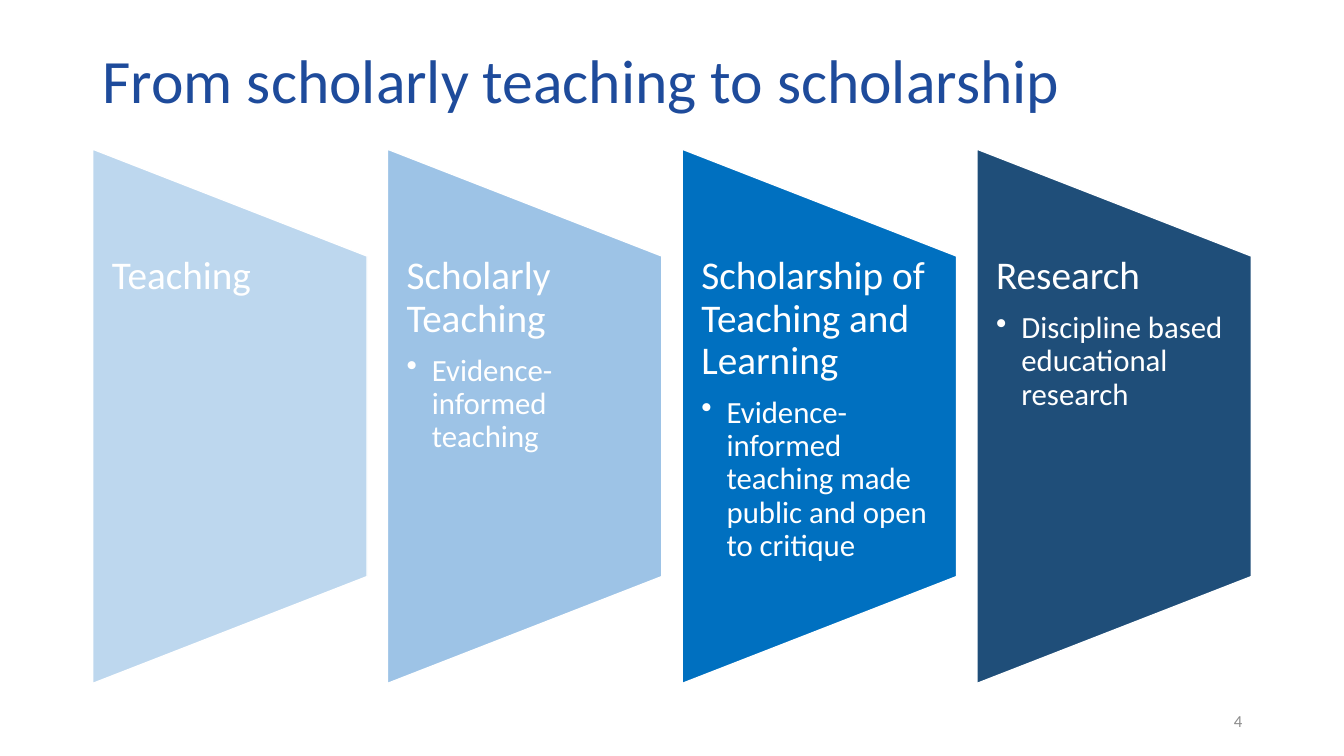
import pptx
import pptx.util
import pptx.dml.color
import pptx.enum.shapes
import pptx.enum.text
import pptx.oxml.ns
from lxml import etree

Inches, Pt = pptx.util.Inches, pptx.util.Pt
RGBColor = pptx.dml.color.RGBColor
ALIGN = pptx.enum.text.PP_ALIGN
ANCHOR = pptx.enum.text.MSO_ANCHOR

WHITE = RGBColor(0xFF, 0xFF, 0xFF)
NAVY = RGBColor(0x1E, 0x4B, 0x9B)
GREY = RGBColor(0x8C, 0x8C, 0x8C)
PALE = RGBColor(0xBD, 0xD7, 0xEE)
LIGHT = RGBColor(0x9D, 0xC3, 0xE6)
BLUE = RGBColor(0x00, 0x70, 0xC0)
DARK = RGBColor(0x1F, 0x4E, 0x79)

TITLE = "From scholarly teaching to scholarship"
NUMBER = "4"
STAGES = [
    ("Teaching", None, PALE),
    ("Scholarly Teaching", "Evidence-informed teaching", LIGHT),
    ("Scholarship of Teaching and Learning",
     "Evidence-informed teaching made public and open to critique", BLUE),
    ("Research", "Discipline based educational research", DARK),
]

LEFT, SPAN = 0.92, 11.49
WIDE, TALL, MID = 2.72, 5.3, 4.13
TEXT_H = 3.18
STEP = (SPAN - WIDE) / (len(STAGES) - 1)


def add_box(slide, x, y, w, h, anchor=ANCHOR.TOP, pads=(0.1, 0.05, 0.1, 0.05)):
    """Add a wrapping text box; pads are left, top, right, bottom."""
    box = slide.shapes.add_textbox(Inches(x), Inches(y), Inches(w), Inches(h))
    frame = box.text_frame
    frame.word_wrap = True
    frame.vertical_anchor = anchor
    (frame.margin_left, frame.margin_top,
     frame.margin_right, frame.margin_bottom) = map(Inches, pads)
    return frame


def write(para, text, size, color, align=ALIGN.LEFT, line=1.0, after=0,
          bullet=False):
    if bullet:
        props = para._p.get_or_add_pPr()
        props.set("marL", str(Inches(0.25)))
        props.set("indent", str(-Inches(0.25)))
        mark = etree.SubElement(props, pptx.oxml.ns.qn("a:buChar"))
        mark.set("char", "•")
    para.alignment = align
    para.line_spacing = line
    para.space_after = Pt(after)
    run = para.add_run()
    run.text = text
    run.font.name = "Calibri"
    run.font.size = Pt(size)
    run.font.color.rgb = color


def add_panel(slide, x, fill):
    """Add a trapezoid turned so that its long side faces left."""
    panel = slide.shapes.add_shape(
        pptx.enum.shapes.MSO_SHAPE.FLOWCHART_MANUAL_OPERATION,
        Inches(x + (WIDE - TALL) / 2), Inches(MID - WIDE / 2),
        Inches(TALL), Inches(WIDE))
    panel.rotation = 270
    panel.shadow.inherit = False
    panel.fill.solid()
    panel.fill.fore_color.rgb = fill
    panel.line.color.rgb = WHITE
    panel.line.width = Pt(1)


def main():
    deck = pptx.Presentation()
    deck.slide_width, deck.slide_height = Inches(13.33), Inches(7.5)
    slide = deck.slides.add_slide(deck.slide_layouts[6])

    title = add_box(slide, LEFT, 0.4, 11.5, 0.85, ANCHOR.MIDDLE)
    write(title.paragraphs[0], TITLE, 44, NAVY, line=0.9)

    for i, (head, note, fill) in enumerate(STAGES):
        x = LEFT + i * STEP
        add_panel(slide, x, fill)
        frame = add_box(slide, x, MID - TEXT_H / 2, WIDE, TEXT_H,
                        pads=(0.19, 0, 0.2, 0))
        write(frame.paragraphs[0], head, 28, WHITE, line=0.9, after=9.8)
        if note:
            write(frame.add_paragraph(), note, 22, WHITE, line=0.9,
                  after=3.3, bullet=True)

    foot = add_box(slide, 9.42, 6.95, 3, 0.4, ANCHOR.MIDDLE)
    write(foot.paragraphs[0], NUMBER, 12, GREY, align=ALIGN.RIGHT)

    deck.save("out.pptx")


if __name__ == "__main__":
    main()
